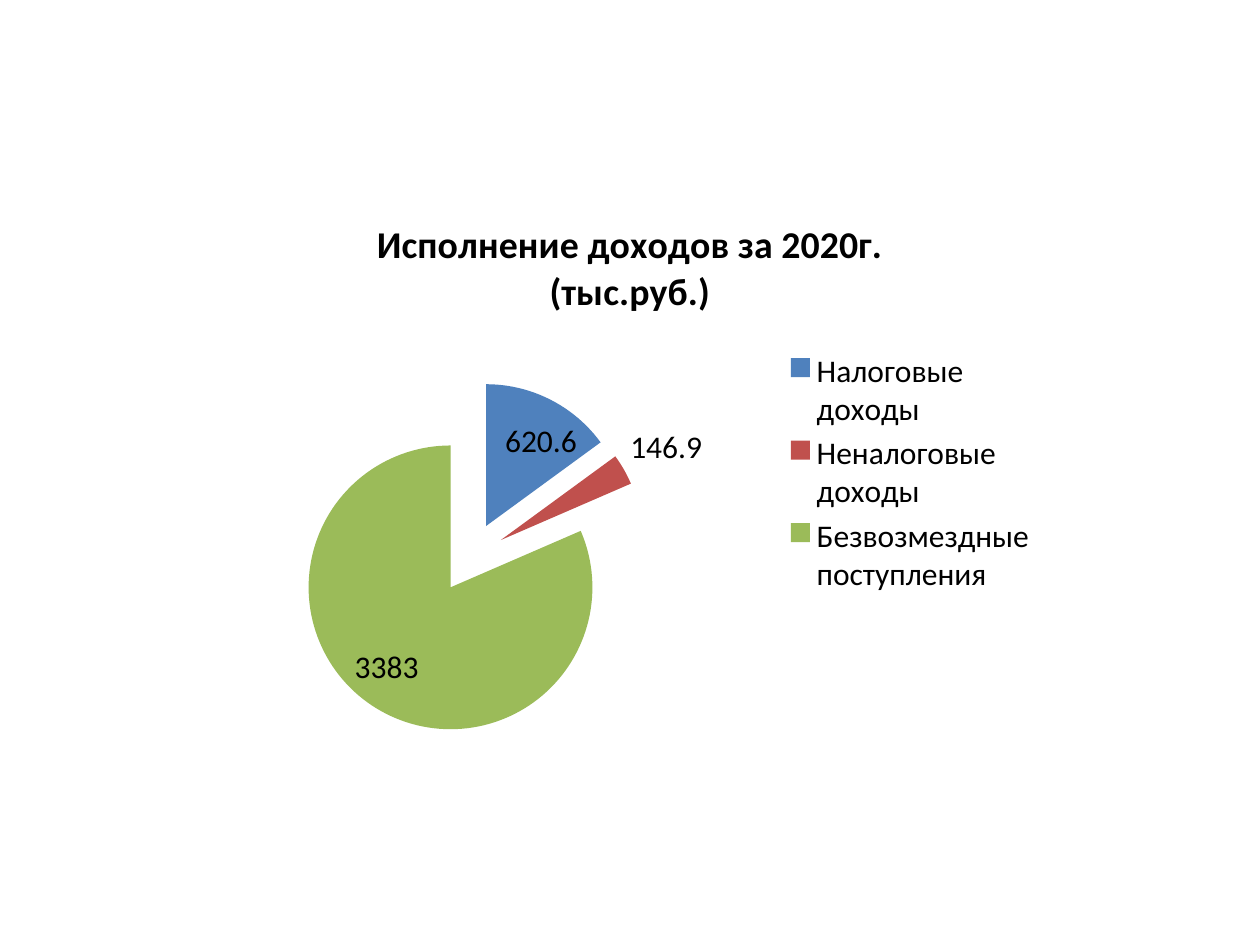
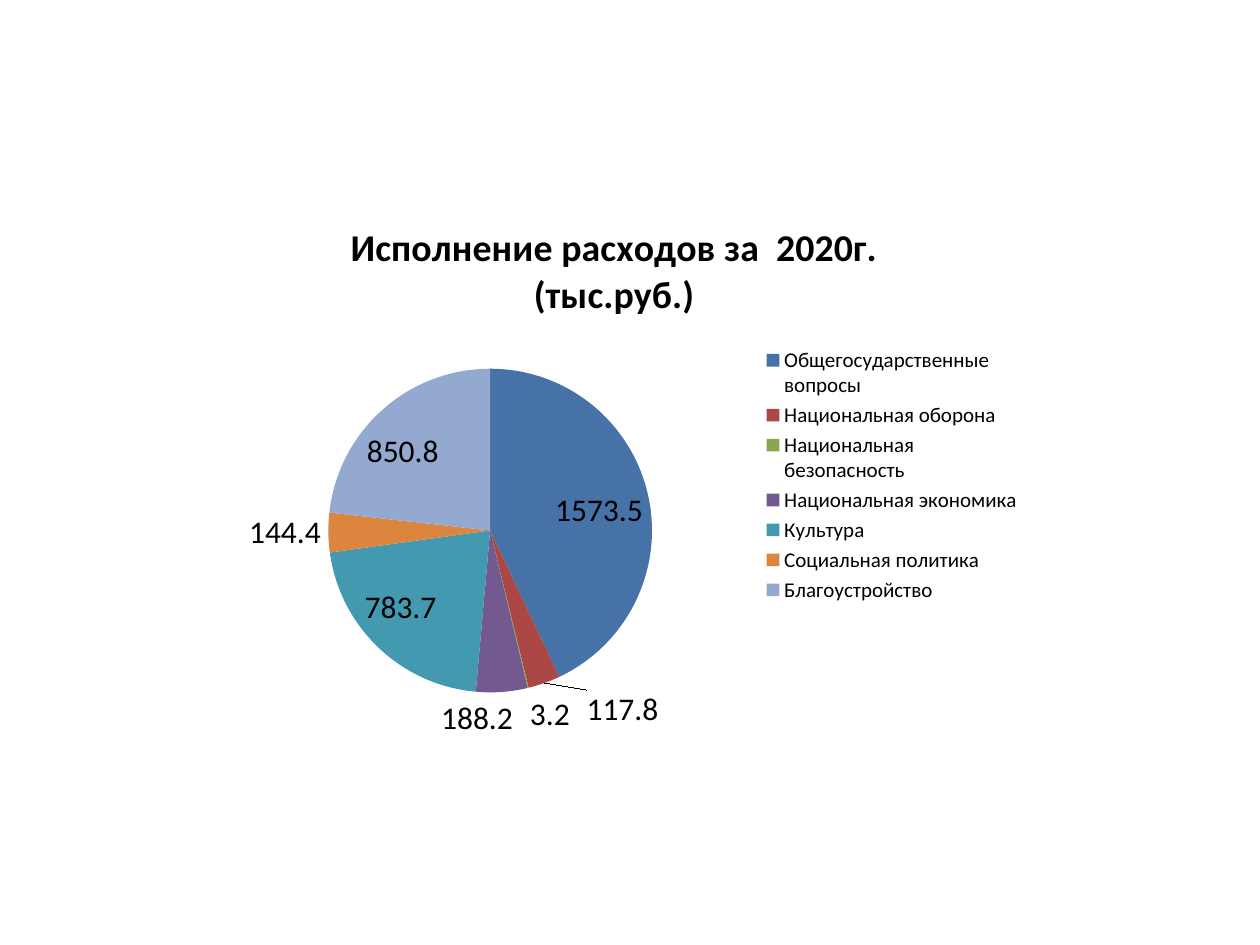
from pptx import Presentation
from pptx.chart.data import CategoryChartData
from pptx.dml.color import RGBColor
from pptx.enum import chart as ch
from pptx.oxml import ns, parse_xml
from pptx.util import Pt

FONT = "Calibri"
BLACK = "000000"
CHART_SIZE = (480, 320)
INCOME = [
    ("Налоговые доходы", 620.6, "4F81BD"),
    ("Неналоговые доходы", 146.9, "C0504D"),
    ("Безвозмездные поступления", 3383, "9BBB59"),
]
SPENDING = [
    ("Общегосударственные вопросы", 1573.5, "4672A8"),
    ("Национальная оборона", 117.8, "AB4744"),
    ("Национальная безопасность", 3.2, "8AA64F"),
    ("Национальная экономика", 188.2, "725990"),
    ("Культура", 783.7, "4299B0"),
    ("Социальная политика", 144.4, "DC853E"),
    ("Благоустройство", 850.8, "93A9D0"),
]


def color(value):
    """Return the colour for a hex string."""
    return RGBColor.from_string(value)


def style_font(font, size=18, bold=False, fill=BLACK):
    """Apply the shared typeface with a size, weight and colour."""
    font.name = FONT
    font.size = Pt(size)
    font.bold = bold
    font.color.rgb = color(fill)


def write(tf, content, **fmt):
    """Put text into a frame as one formatted run."""
    r = tf.paragraphs[0].add_run()
    r.text = content
    style_font(r.font, **fmt)


def explode(series, percent):
    """Move every slice of a pie series outwards."""
    xml = f'<c:explosion {ns.nsdecls("c")} val="{percent}"/>'
    series._element.find(ns.qn("c:tx")).addnext(parse_xml(xml))


def add_pie(s, title, rows, left, top, legend_size=18, explosion=0):
    """Add a titled pie chart with value labels and a legend."""
    data = CategoryChartData()
    data.categories = [name for name, _, _ in rows]
    data.add_series("Series 1", [value for _, value, _ in rows])
    frame = s.shapes.add_chart(ch.XL_CHART_TYPE.PIE, Pt(left), Pt(top),
                               *map(Pt, CHART_SIZE), data)
    chart = frame.chart
    style_font(chart.font)
    chart.has_title = True
    write(chart.chart_title.text_frame, title, size=21.6, bold=True)
    chart.chart_title.include_in_layout = False
    chart.has_legend = True
    chart.legend.position = ch.XL_LEGEND_POSITION.RIGHT
    chart.legend.include_in_layout = False
    style_font(chart.legend.font, size=legend_size)
    plot = chart.plots[0]
    plot.vary_by_categories = True
    series = plot.series[0]
    if explosion:
        explode(series, explosion)
    for i, (_, _, fill) in enumerate(rows):
        area = series.points[i].format.fill
        area.solid()
        area.fore_color.rgb = color(fill)
    labels = series.data_labels
    labels.show_value = True
    labels.position = ch.XL_LABEL_POSITION.BEST_FIT
    style_font(labels.font)


def main():
    """Build the income and spending slides."""
    prs = Presentation()
    prs.slide_width, prs.slide_height = Pt(720), Pt(540)
    blank = prs.slide_layouts[6]
    add_pie(prs.slides.add_slide(blank), "Исполнение доходов за 2020г. (тыс.руб.)",
            INCOME, 120, 110, explosion=25)
    add_pie(prs.slides.add_slide(blank), "Исполнение расходов за  2020г. (тыс.руб.)",
            SPENDING, 111, 111.5, legend_size=12)
    prs.save("out.pptx")


if __name__ == "__main__":
    main()
